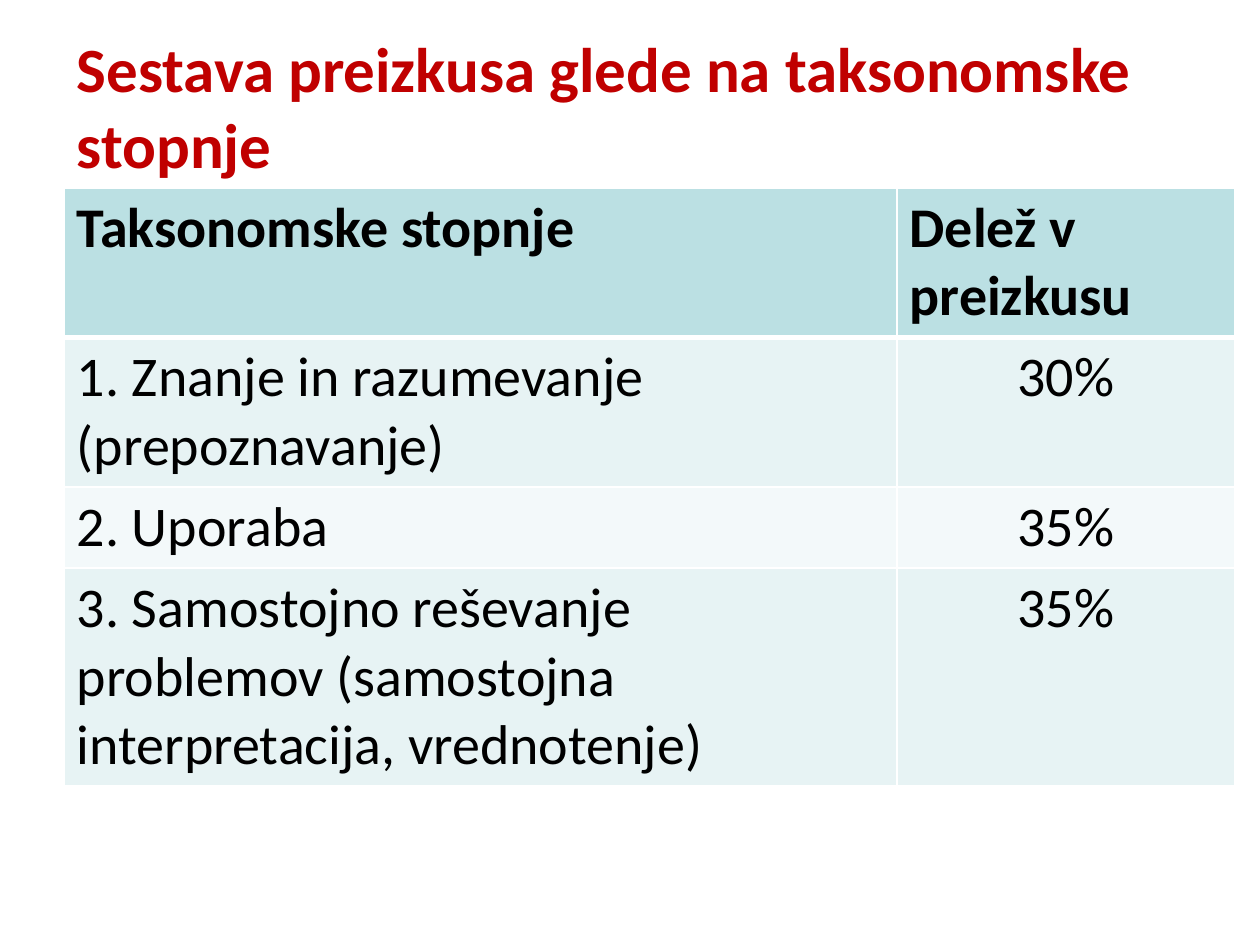
from lxml import etree
from pptx import Presentation
from pptx.dml.color import RGBColor
from pptx.enum.text import MSO_ANCHOR, PP_ALIGN
from pptx.oxml.ns import qn
from pptx.util import Inches, Pt

LEFT, CENTER = PP_ALIGN.LEFT, PP_ALIGN.CENTER
MIDDLE = MSO_ANCHOR.MIDDLE
TITLE_ONLY = 5
FONT = "Calibri"
RED, BLACK, WHITE = "C00000", "000000", "FFFFFF"
HEADER_FILL, BAND_FILLS = "BBE0E3", ("F3F9FA", "E7F3F4")

COLUMN_WIDTHS = (6.61, 2.68)
ROW_HEIGHTS = (1.17, 1.17, 0.64, 1.69)
ROWS = (
    ("Taksonomske stopnje", "Delež v preizkusu"),
    ("1. Znanje in razumevanje (prepoznavanje)", "30%"),
    ("2. Uporaba", "35%"),
    ("3. Samostojno reševanje problemov "
     "(samostojna interpretacija, vrednotenje)", "35%"),
)


def color(value):
    return RGBColor.from_string(value)


def add_text(frame, text, size, ink, bold, align):
    para = frame.paragraphs[0]
    para.alignment = align
    span = para.add_run()
    span.text = text
    span.font.name = FONT
    span.font.size = Pt(size)
    span.font.bold = bold
    span.font.color.rgb = color(ink)


def add_title(page, text):
    box = page.shapes.title
    box.left, box.top = Inches(0.51), Inches(0.21)
    box.width, box.height = Inches(9), Inches(1.25)
    box.text_frame.word_wrap = True
    box.text_frame.vertical_anchor = MIDDLE
    add_text(box.text_frame, text, 36, RED, True, LEFT)


def set_borders(cell, top, bottom):
    properties = cell._tc.get_or_add_tcPr()
    for side, width in (("lnL", 1), ("lnR", 1), ("lnT", top), ("lnB", bottom)):
        line = etree.SubElement(properties, qn(f"a:{side}"), w=str(Pt(width)))
        fill = etree.SubElement(line, qn("a:solidFill"))
        etree.SubElement(fill, qn("a:srgbClr"), val=WHITE)


def add_level_table(page):
    table = page.shapes.add_table(
        len(ROWS), len(COLUMN_WIDTHS), Inches(0.51), Inches(1.49),
        Inches(sum(COLUMN_WIDTHS)), Inches(sum(ROW_HEIGHTS))).table
    for column, width in zip(table.columns, COLUMN_WIDTHS):
        column.width = Inches(width)
    for r, (texts, height) in enumerate(zip(ROWS, ROW_HEIGHTS)):
        table.rows[r].height = Inches(height)
        header = r == 0
        for c, text in enumerate(texts):
            cell = table.cell(r, c)
            # The header row is set off by a thicker rule below it
            set_borders(cell, 3 if r == 1 else 1, 3 if header else 1)
            cell.fill.solid()
            cell.fill.fore_color.rgb = color(
                HEADER_FILL if header else BAND_FILLS[r % 2])
            align = CENTER if c == 1 and not header else LEFT
            add_text(cell.text_frame, text, 32, BLACK, header, align)


def main():
    deck = Presentation()
    deck.slide_width, deck.slide_height = Inches(10), Inches(7.5)
    page = deck.slides.add_slide(deck.slide_layouts[TITLE_ONLY])
    # Heading
    add_title(page, "Sestava preizkusa glede na taksonomske stopnje")
    # Share of each taxonomic level
    add_level_table(page)
    deck.save("out.pptx")


if __name__ == "__main__":
    main()
